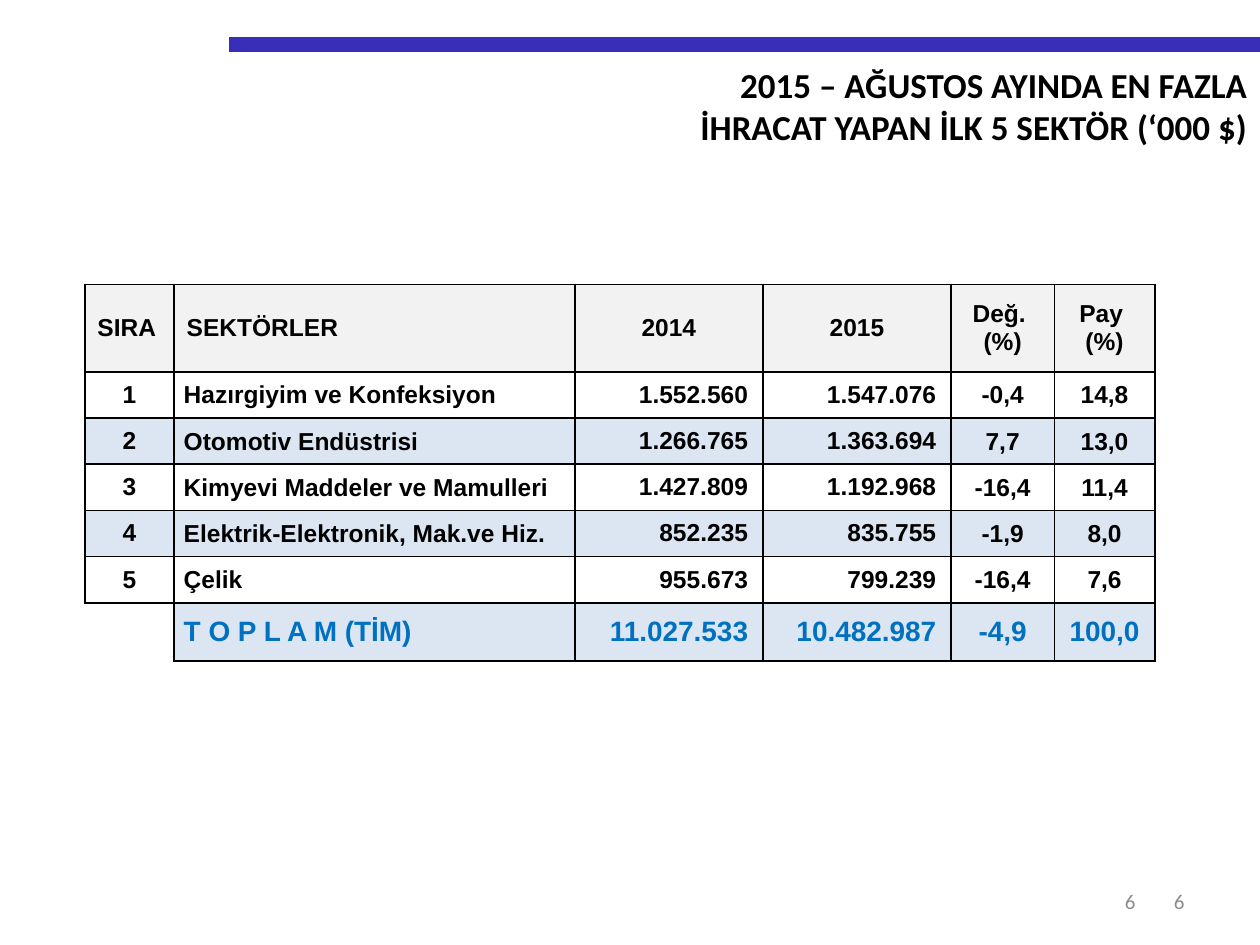
from lxml import etree
from pptx import Presentation
from pptx.dml.color import RGBColor
from pptx.enum import shapes, text
from pptx.oxml import ns
from pptx.util import Pt

# Content
TITLE = ["2015 – AĞUSTOS AYINDA EN FAZLA", "İHRACAT YAPAN İLK 5 SEKTÖR (‘000 $)"]
HEAD = ["SIRA", "SEKTÖRLER", "2014", "2015", "Değ. \n(%)", "Pay \n(%)"]
BODY = [
    ["1", "Hazırgiyim ve Konfeksiyon", "1.552.560", "1.547.076", "-0,4", "14,8"],
    ["2", "Otomotiv Endüstrisi", "1.266.765", "1.363.694", "7,7", "13,0"],
    ["3", "Kimyevi Maddeler ve Mamulleri", "1.427.809", "1.192.968", "-16,4", "11,4"],
    ["4", "Elektrik-Elektronik, Mak.ve Hiz.", "852.235", "835.755", "-1,9", "8,0"],
    ["5", "Çelik", "955.673", "799.239", "-16,4", "7,6"],
]
TOTAL = ["", "T O P L A M (TİM)", "11.027.533", "10.482.987", "-4,9", "100,0"]
PAGE = "6"

# Style
BLACK = RGBColor(0x00, 0x00, 0x00)
BAND = RGBColor(0x38, 0x2E, 0xB8)
GRAY = RGBColor(0x8C, 0x8C, 0x8C)
PALE = RGBColor(0xF2, 0xF2, 0xF2)
TINT = RGBColor(0xDC, 0xE6, 0xF2)
BLUE = RGBColor(0x00, 0x70, 0xC0)
LEFT, MID, RIGHT = text.PP_ALIGN.LEFT, text.PP_ALIGN.CENTER, text.PP_ALIGN.RIGHT

# Table layout: widths, heights, alignment and insets (left, top, right, bottom)
WIDTHS = [51, 229, 107.5, 107.5, 59, 57.5]
HEIGHTS = [50] + [26.4] * len(BODY) + [33.3]
HEAD_AL = [LEFT, LEFT, MID, MID, MID, MID]
BODY_AL = [MID, LEFT, RIGHT, RIGHT, MID, MID]
NAME_IN, SUM_IN, PCT_IN = (5.5, 0.5, 0.5, 0), (0.5, 0, 8.5, 0), (0.5, 0.5, 0.5, 0)
INSETS = [None, NAME_IN, SUM_IN, SUM_IN, PCT_IN, PCT_IN]


def style(frame, align, face, size, color, bold):
    for par in frame.paragraphs:
        par.alignment = align
        font = par.font
        font.name, font.size, font.bold = face, Pt(size), bold
        font.color.rgb = color


def border(cell, sides):
    props = cell._tc.get_or_add_tcPr()
    for side in "LRTB":
        line = etree.SubElement(props, ns.qn("a:ln" + side), w=str(Pt(1)))
        if side in sides:
            fill = etree.SubElement(line, ns.qn("a:solidFill"))
            etree.SubElement(fill, ns.qn("a:srgbClr"), val=str(BLACK))
        else:
            etree.SubElement(line, ns.qn("a:noFill"))


def fill_cell(cell, words, row, col):
    first, last = row == 0, row == len(HEIGHTS) - 1
    cell.text = words
    cell.vertical_anchor = text.MSO_ANCHOR.MIDDLE
    if not first and INSETS[col]:
        (cell.margin_left, cell.margin_top,
         cell.margin_right, cell.margin_bottom) = map(Pt, INSETS[col])
    align = HEAD_AL[col] if first else BODY_AL[col]
    style(cell.text_frame, align, "Arial", 16 if last else 14,
          BLUE if last else BLACK, True)
    border(cell, "LRTB" if words else "RT")
    if words and row % 2 == 0:
        cell.fill.solid()
        cell.fill.fore_color.rgb = PALE if first else TINT
    else:
        cell.fill.background()


def main():
    deck = Presentation()
    deck.slide_width, deck.slide_height = Pt(720), Pt(540)
    slide = deck.slides.add_slide(deck.slide_layouts[5])
    items = slide.shapes

    # Top band
    band = items.add_connector(shapes.MSO_CONNECTOR.STRAIGHT,
                               Pt(131), Pt(25.4), Pt(720), Pt(25.4))
    band.line.color.rgb = BAND
    band.line.width = Pt(8.5)
    etree.SubElement(band._element.spPr, ns.qn("a:effectLst"))

    # Title
    title = items.title
    title.left, title.top, title.width, title.height = map(Pt, (76, 32.4, 644, 55.4))
    frame = title.text_frame
    frame.text = "\n".join(TITLE)
    frame.auto_size = text.MSO_AUTO_SIZE.NONE
    frame.vertical_anchor = text.MSO_ANCHOR.TOP
    style(frame, RIGHT, "Calibri", 20, BLACK, True)

    # Sector table
    rows = [HEAD] + BODY + [TOTAL]
    table = items.add_table(len(rows), len(HEAD), Pt(48.5), Pt(162.5),
                            Pt(sum(WIDTHS)), Pt(sum(HEIGHTS))).table
    table.horz_banding = table.first_row = False
    for col, width in enumerate(WIDTHS):
        table.columns[col].width = Pt(width)
    for row, (height, line) in enumerate(zip(HEIGHTS, rows)):
        table.rows[row].height = Pt(height)
        for col, words in enumerate(line):
            fill_cell(table.cell(row, col), words, row, col)

    # Page numbers
    for right in (656, 684):
        box = items.add_textbox(Pt(right - 150), Pt(500.5), Pt(150), Pt(28.8))
        frame = box.text_frame
        frame.word_wrap = True
        frame.vertical_anchor = text.MSO_ANCHOR.MIDDLE
        frame.text = PAGE
        style(frame, RIGHT, "Calibri", 12, GRAY, False)

    deck.save("out.pptx")


if __name__ == "__main__":
    main()
